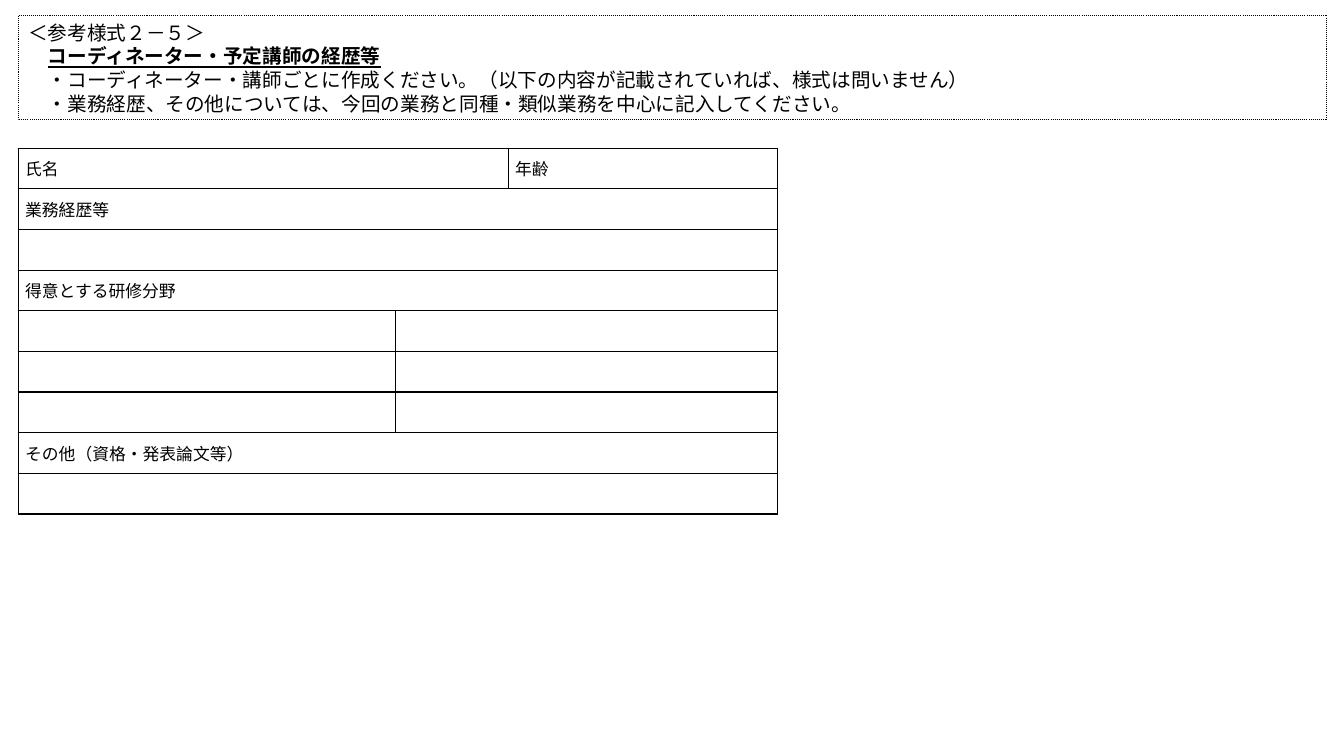
import pptx
import pptx.util
import pptx.dml.color
import pptx.enum.dml
import pptx.enum.text
import pptx.oxml.ns
from lxml import etree

Inches, Pt = pptx.util.Inches, pptx.util.Pt
BLACK = pptx.dml.color.RGBColor(0, 0, 0)
FONT = "Noto Sans CJK JP"

HEADER_LINES = [
    [("＜参考様式２－５＞", False)],
    [("\u3000".strip() or "　", False), ("コーディネーター・予定講師の経歴等", True)],
    [("　・コーディネーター・講師ごとに作成ください。（以下の内容が記載されていれば、様式は問いません）", False)],
    [("　・業務経歴、その他については、今回の業務と同種・類似業務を中心に記入してください。", False)],
]
HEADER_LINES[1][0] = ("　", False)

# Each row lists its cells as (text, columns spanned)
FORM_ROWS = [
    [("氏名", 2), ("年齢", 1)],
    [("業務経歴等", 3)],
    [("", 3)],
    [("得意とする研修分野", 3)],
    *[[("", 1), ("", 2)]] * 3,
    [("その他（資格・発表論文等）", 3)],
    [("", 3)],
]
COLUMN_WIDTHS = [3.74, 1.12, 2.67]


class FormSlide:
    """Style and drawing methods for one form slide."""

    def __init__(self, prs):
        self.s = prs.slides.add_slide(prs.slide_layouts[5])

    def style_run(self, r, size, bold=False):
        r.font.size, r.font.name = Pt(size), FONT
        r.font.bold = r.font.underline = bold
        r.font.color.rgb = BLACK
        ea = etree.SubElement(r.font._element, pptx.oxml.ns.qn("a:ea"))
        ea.set("typeface", FONT)

    def header(self, left, top, width, height, lines):
        sp = self.s.shapes.title
        sp.left, sp.top, sp.width, sp.height = map(Inches, (left, top, width, height))
        sp.line.color.rgb = BLACK
        sp.line.width = Pt(0.75)
        sp.line.dash_style = pptx.enum.dml.MSO_LINE.ROUND_DOT
        tf = sp.text_frame
        tf.word_wrap = True
        tf.auto_size = pptx.enum.text.MSO_AUTO_SIZE.SHAPE_TO_FIT_TEXT
        tf.vertical_anchor = pptx.enum.text.MSO_ANCHOR.TOP
        for i, line in enumerate(lines):
            p = tf.paragraphs[0] if i == 0 else tf.add_paragraph()
            p.alignment = pptx.enum.text.PP_ALIGN.LEFT
            p.line_spacing = Pt(17)
            for text, bold in line:
                r = p.add_run()
                r.text = text
                self.style_run(r, 14, bold)

    def border(self, cell):
        tc_pr = cell._tc.get_or_add_tcPr()
        for i, side in enumerate(("lnL", "lnR", "lnT", "lnB")):
            ln = etree.Element(pptx.oxml.ns.qn(f"a:{side}"), w=str(Pt(1)))
            fill = etree.SubElement(ln, pptx.oxml.ns.qn("a:solidFill"))
            etree.SubElement(fill, pptx.oxml.ns.qn("a:srgbClr"), val=str(BLACK))
            tc_pr.insert(i, ln)

    def table(self, left, top, height, widths, rows):
        frame = self.s.shapes.add_table(
            len(rows), len(widths), Inches(left), Inches(top),
            Inches(sum(widths)), Inches(height))
        table = frame.table
        table.first_row = table.horz_banding = False
        for column, width in zip(table.columns, widths):
            column.width = Inches(width)
        for cell in table.iter_cells():
            cell.fill.background()
            self.border(cell)
            cell.margin_left = cell.margin_right = Inches(0.07)
            cell.margin_top = cell.margin_bottom = 0
            cell.vertical_anchor = pptx.enum.text.MSO_ANCHOR.MIDDLE
        for row, cells in enumerate(rows):
            col = 0
            for text, span in cells:
                cell = table.cell(row, col)
                if span > 1:
                    cell.merge(table.cell(row, col + span - 1))
                if text:
                    p = cell.text_frame.paragraphs[0]
                    p.text = text
                    p.alignment = pptx.enum.text.PP_ALIGN.JUSTIFY
                    self.style_run(p.runs[0], 12)
                col += span


def main():
    prs = pptx.Presentation()
    prs.slide_width, prs.slide_height = Inches(13.33), Inches(7.5)
    form = FormSlide(prs)
    # Heading box with instructions
    form.header(0.18, 0.15, 12.98, 1.04, HEADER_LINES)
    # Career form
    form.table(0.18, 1.47, 3.63, COLUMN_WIDTHS, FORM_ROWS)
    prs.save("out.pptx")


if __name__ == "__main__":
    main()
